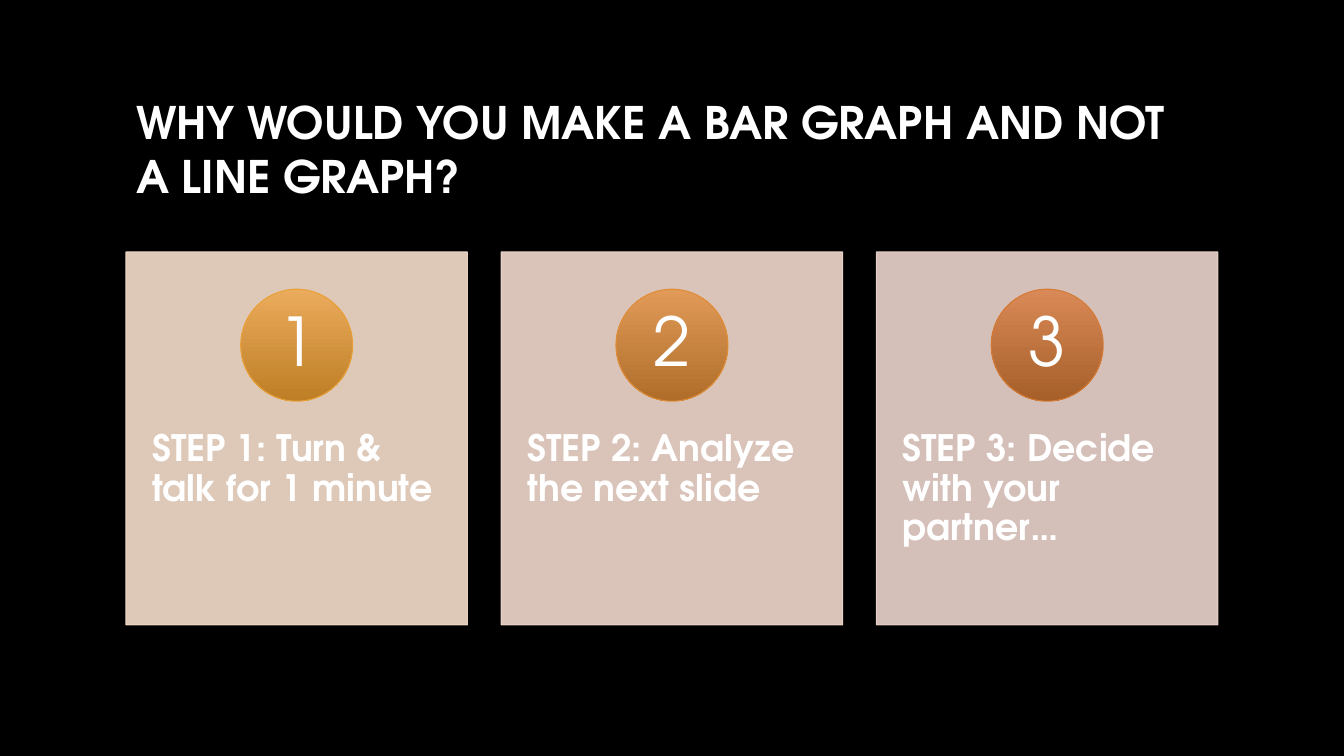
from dataclasses import dataclass

from lxml import etree
from pptx import Presentation
from pptx.dml.color import RGBColor
from pptx.enum.shapes import MSO_SHAPE as Shape
from pptx.enum.text import MSO_ANCHOR as Anchor, MSO_AUTO_SIZE as AutoSize, PP_ALIGN as Align
from pptx.oxml.ns import qn
from pptx.util import Pt

TITLE = "WHY WOULD YOU MAKE A BAR GRAPH AND NOT A LINE GRAPH?"
STEPS = [
    {"text": "STEP 1: Turn & talk for 1 minute",
     "card": "F7DFCE", "badge": ("EBAB5C", "BD7E25"), "rim": "E9A039"},
    {"text": "STEP 2: Analyze the next slide",
     "card": "F2DACE", "badge": ("E29A59", "AF6D29"), "rim": "DF8C36"},
    {"text": "STEP 3: Decide with your partner…",
     "card": "EDD5CE", "badge": ("D98957", "A65F28"), "rim": "D57A34"},
]


@dataclass(frozen=True)
class Theme:
    """Colours and type sizes of the slide."""
    font: str = "TeX Gyre Adventor"
    background: str = "000000"
    ink: str = "FFFFFF"
    title_size: int = 32
    step_size: int = 26
    number_size: int = 48
    card_opacity: int = 90
    line_width: float = 0.75


THEME = Theme()
LEFT, RIGHT = 90, 870
CARD_TOP, CARD_WIDTH, CARD_HEIGHT = 180, 243.9, 266.4
PITCH = (RIGHT - LEFT - CARD_WIDTH) / (len(STEPS) - 1)
BADGE_SIZE, BADGE_DROP = 80, 26.6
STEP_DROP, STEP_HEIGHT = 101.5, 160


def rgb(code):
    """Turn a hex code into a colour."""
    return RGBColor.from_string(code)


def write(shape, text, size, bold=False, align=Align.LEFT, spacing=1.0,
          anchor=Anchor.MIDDLE, inset=(7.2, 3.6)):
    """Put one formatted paragraph into a shape."""
    frame = shape.text_frame
    side, end = map(Pt, inset)
    frame_format = {"word_wrap": True, "auto_size": AutoSize.NONE,
                    "vertical_anchor": anchor, "margin_left": side,
                    "margin_right": side, "margin_top": end, "margin_bottom": end}
    para = frame.paragraphs[0]
    span = para.add_run()
    span.text = text
    span.font.color.rgb = rgb(THEME.ink)
    formats = [
        (frame, frame_format),
        (para, {"alignment": align, "line_spacing": spacing}),
        (span.font, {"name": THEME.font, "size": Pt(size), "bold": bold}),
    ]
    for target, values in formats:
        for name, value in values.items():
            setattr(target, name, value)


def add_outlined(page, kind, place, rim):
    """Add a shadowless shape with a thin outline."""
    shape = page.shapes.add_shape(kind, *map(Pt, place))
    shape.shadow.inherit = False
    shape.line.color.rgb = rgb(rim)
    shape.line.width = Pt(THEME.line_width)
    return shape


def add_card(page, left, colour):
    """Add a translucent card."""
    place = (left, CARD_TOP, CARD_WIDTH, CARD_HEIGHT)
    card = add_outlined(page, Shape.RECTANGLE, place, colour)
    card.fill.solid()
    card.fill.fore_color.rgb = rgb(colour)
    for tint in card._element.spPr.iter(qn("a:srgbClr")):
        etree.SubElement(tint, qn("a:alpha"), val=str(THEME.card_opacity * 1000))


def add_badge(page, left, number, colours, rim):
    """Add a numbered circle, shaded from top to bottom."""
    place = (left + (CARD_WIDTH - BADGE_SIZE) / 2, CARD_TOP + BADGE_DROP,
             BADGE_SIZE, BADGE_SIZE)
    badge = add_outlined(page, Shape.OVAL, place, rim)
    badge.fill.gradient()
    badge.fill.gradient_angle = 270
    for stop, colour in zip(badge.fill.gradient_stops, colours):
        stop.color.rgb = rgb(colour)
    write(badge, str(number), THEME.number_size, align=Align.CENTER,
          spacing=0.9, inset=(6.5, 0.7))


def add_step(page, number, step):
    """Add the card, badge and instruction of one step."""
    left = LEFT + (number - 1) * PITCH
    add_card(page, left, step["card"])
    place = (left, CARD_TOP + STEP_DROP, CARD_WIDTH, STEP_HEIGHT)
    box = page.shapes.add_textbox(*map(Pt, place))
    write(box, step["text"], THEME.step_size, bold=True, spacing=0.9,
          anchor=Anchor.TOP, inset=(18.7, 25.9))
    add_badge(page, left, number, step["badge"], step["rim"])


def add_title(page):
    """Place and format the title."""
    title = page.shapes.title
    place = {"left": LEFT, "top": 48, "width": RIGHT - LEFT, "height": 116}
    for name, value in place.items():
        setattr(title, name, Pt(value))
    write(title, TITLE, THEME.title_size, bold=True)


deck = Presentation()
deck.slide_width, deck.slide_height = Pt(960), Pt(540)
page = deck.slides.add_slide(deck.slide_layouts.get_by_name("Title Only"))
page.background.fill.solid()
page.background.fill.fore_color.rgb = rgb(THEME.background)
add_title(page)
for number, step in enumerate(STEPS, 1):
    add_step(page, number, step)
deck.save("out.pptx")
